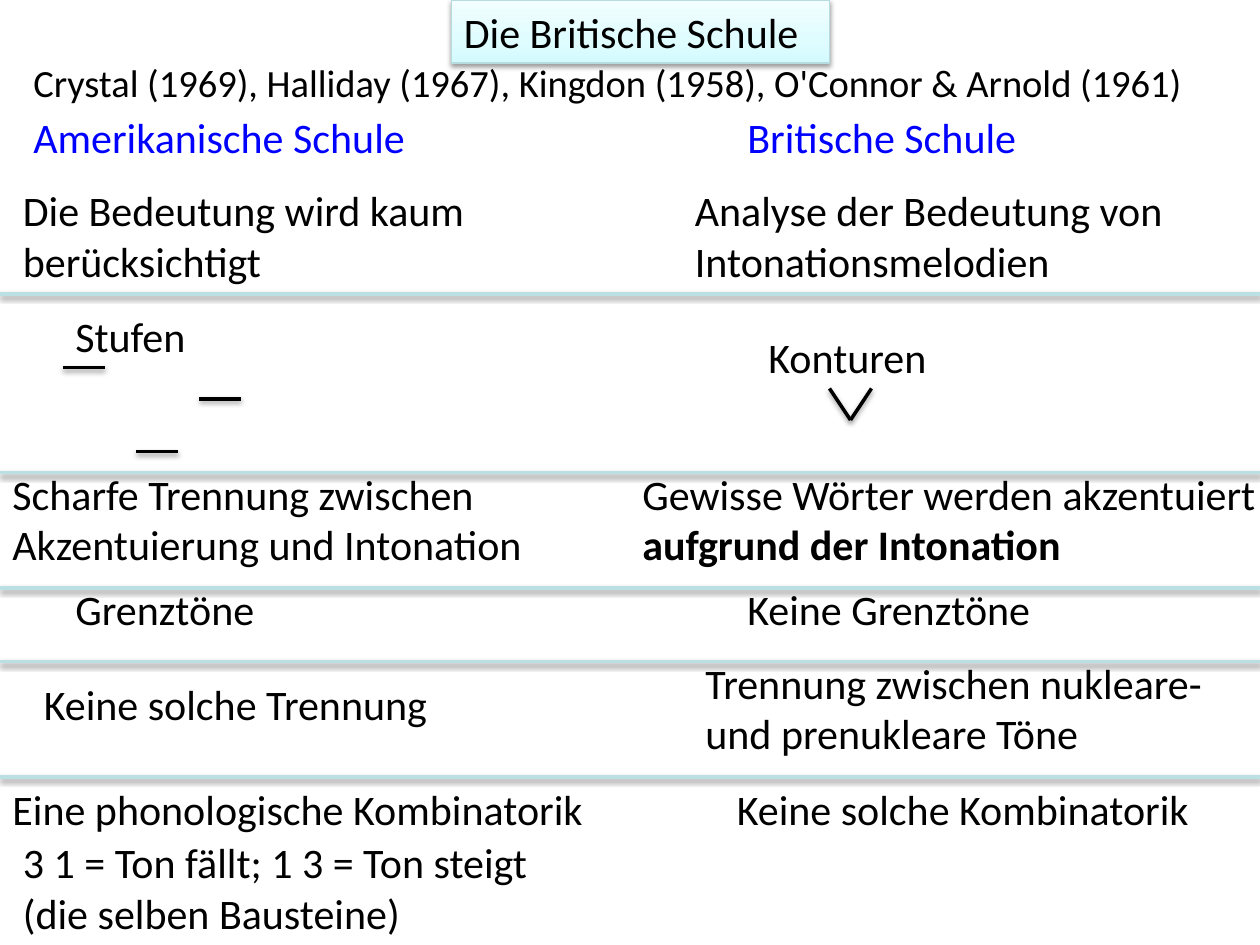
from lxml.etree import SubElement
from pptx import Presentation
from pptx.dml.color import RGBColor
from pptx.enum.shapes import MSO_CONNECTOR as Connector, MSO_SHAPE as Shape
from pptx.enum.text import MSO_ANCHOR as Anchor, MSO_AUTO_SIZE as AutoSize, PP_ALIGN as Align
from pptx.oxml.ns import qn
from pptx.util import Inches, Pt

THEME = {
    "font": "Calibri", "size": 24, "source_size": 22, "line_width": 2,
    "ink": "000000", "heading": "0000FF", "rule": "BBE0E3",
    "title_edge": "B6DCDF", "title_edge_width": 0.75,
    "title_stops": [(0, "D3FBFF"), (35, "DFFCFF"), (100, "F2FEFF")],
}

# All positions are in grid units: 120 columns by 90 rows
COLUMNS, ROWS = 120, 90
LINE_HEIGHTS = {1: 6, 2: 10.9}

TITLE = "Die Britische Schule"
SOURCES = "Crystal (1969), Halliday (1967), Kingdon (1958), O'Connor & Arnold (1961)"

# Column, row, width, line count, text
HEADINGS = [
    (2, 10, 45, 1, "Amerikanische Schule"),
    (70, 10, 46, 1, "Britische Schule"),
]
AMERICAN = [
    (1, 17, 48, 2, "Die Bedeutung wird kaum berücksichtigt"),
    (6, 29, 19, 1, "Stufen"),
    (0, 44, 53.4, 2, "Scharfe Trennung zwischen Akzentuierung und Intonation"),
    (6, 55, 21, 1, "Grenztöne"),
    (3, 64, 49, 1, "Keine solche Trennung"),
    (0, 74, 58, 1, "Eine phonologische Kombinatorik"),
    (1, 79.1, 54, 2, "3 1 = Ton fällt; 1 3 = Ton steigt (die selben Bausteine)"),
]
BRITISH = [
    (65, 17, 50, 2, "Analyse der Bedeutung von Intonationsmelodien"),
    (72, 31, 20, 1, "Konturen"),
    (60, 44, 61.4, 2, "Gewisse Wörter werden akzentuiert ", "aufgrund der Intonation"),
    (70, 55, 31, 1, "Keine Grenztöne"),
    (66, 62, 51, 2, "Trennung zwischen nukleare- und prenukleare Töne"),
    (69, 74, 48, 1, "Keine solche Kombinatorik"),
]
DIVIDER_ROWS = [28, 45, 56, 63, 74]
STEPS = [(6, 35), (13, 43), (19, 38)]
STEP_WIDTH = 4
CONTOUR_TIP, CONTOUR_ENDS = (81, 40), [(79, 37), (83, 37)]

deck = Presentation()
deck.slide_width, deck.slide_height = Inches(10), Inches(7.5)
page = deck.slides.add_slide(deck.slide_layouts[6])


def across(units):
    return round(deck.slide_width * units / COLUMNS)


def down(units):
    return round(deck.slide_height * units / ROWS)


def color(name):
    return RGBColor.from_string(THEME.get(name, name))


def add_shadow(shape):
    effects = SubElement(shape._element.spPr, qn("a:effectLst"))
    shadow = SubElement(effects, qn("a:outerShdw"), blurRad=str(Pt(3.1)),
                        dist=str(Pt(1.6)), dir="5400000", rotWithShape="0")
    tint = SubElement(shadow, qn("a:srgbClr"), val=THEME["ink"])
    SubElement(tint, qn("a:alpha"), val="38000")


def write(box, text, bold_text="", size="size", ink="ink"):
    frame = box.text_frame
    frame.word_wrap = True
    frame.auto_size = AutoSize.SHAPE_TO_FIT_TEXT
    frame.vertical_anchor = Anchor.TOP
    para = frame.paragraphs[0]
    para.alignment = Align.LEFT
    for part, bold in ((text, False), (bold_text, True)):
        if part:
            span = para.add_run()
            span.text = part
            span.font.name, span.font.size = THEME["font"], Pt(THEME[size])
            span.font.bold, span.font.color.rgb = bold, color(ink)


def add_text(column, row, width, lines, *parts, **style):
    box = page.shapes.add_textbox(across(column), down(row), across(width),
                                  down(LINE_HEIGHTS[lines]))
    write(box, *parts, **style)


def add_line(start, end, ink):
    line = page.shapes.add_connector(Connector.STRAIGHT, across(start[0]), down(start[1]),
                                     across(end[0]), down(end[1]))
    line.line.color.rgb = color(ink)
    line.line.width = Pt(THEME["line_width"])
    add_shadow(line)


# Title box with a three-stop gradient
title = page.shapes.add_shape(Shape.RECTANGLE, across(43), 0, across(36), down(LINE_HEIGHTS[1]))
title.fill.gradient()
title.fill.gradient_angle = 90
stops = title._element.spPr.find(".//" + qn("a:gsLst"))
for old_stop in list(stops):
    stops.remove(old_stop)
for percent, tone in THEME["title_stops"]:
    stop = SubElement(stops, qn("a:gs"), pos=str(percent * 1000))
    SubElement(stop, qn("a:srgbClr"), val=tone)
title.line.color.rgb = color("title_edge")
title.line.width = Pt(THEME["title_edge_width"])
add_shadow(title)
write(title, TITLE)

# Sources and column headings
add_text(2, 5, 115, 1, SOURCES, size="source_size")
for heading in HEADINGS:
    add_text(*heading, ink="heading")

# Dividers between the compared points
for row in DIVIDER_ROWS:
    add_line((0, row), (COLUMNS, row), "rule")

# Compared points
for point in BRITISH + AMERICAN:
    add_text(*point)

# Tone steps and V-shaped contour
for column, row in STEPS:
    add_line((column, row), (column + STEP_WIDTH, row), "ink")
for end in CONTOUR_ENDS:
    add_line(end, CONTOUR_TIP, "ink")

deck.save("out.pptx")
